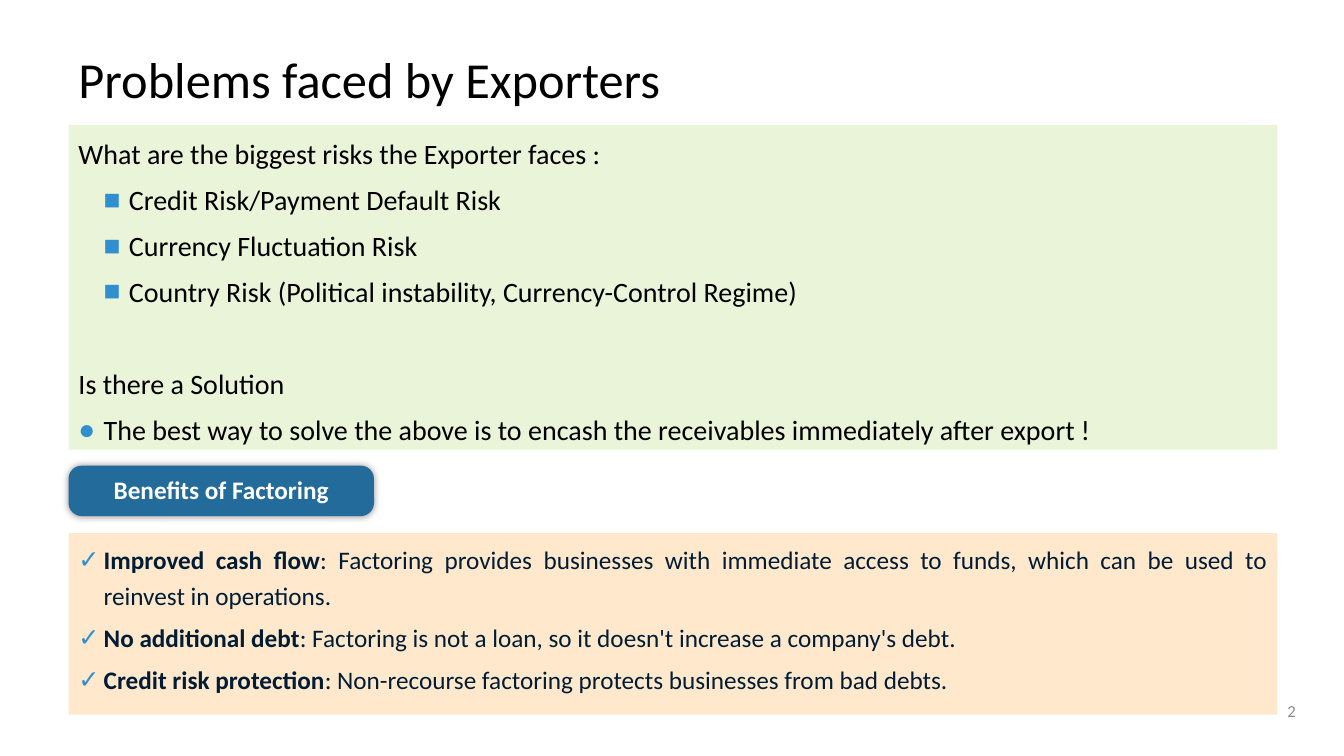
from lxml import etree
from pptx import Presentation
from pptx.dml.color import RGBColor
from pptx.enum import shapes, text
from pptx.oxml import ns
from pptx.util import Inches, Pt

deck = Presentation()
deck.slide_width, deck.slide_height = Inches(13.33), Inches(7.5)
slide = deck.slides.add_slide(deck.slide_layouts[6])

LEFT, WIDE = 0.68, 11.99
BLUE = "2F8FCF"
MID = text.MSO_ANCHOR.MIDDLE
JUST = text.PP_ALIGN.JUSTIFY


def color(code):
    return RGBColor.from_string(code)


def write(box, words, size=20, ink="000000", lead="", bold=False, align=None,
          line=1.2, before=2, after=2, mark=None, indent=0):
    """Add a paragraph, with an optional bold lead and bullet mark."""
    frame = box.text_frame
    first = not frame.paragraphs[0].runs
    para = frame.paragraphs[0] if first else frame.add_paragraph()
    para.line_spacing = line
    para.space_before = Pt(0 if first else before)
    para.space_after = Pt(after)
    if align is not None:
        para.alignment = align
    if mark:
        props = para._p.get_or_add_pPr()
        props.set("marL", str(Inches(indent)))
        props.set("indent", str(Inches(-0.25)))
        tint = etree.SubElement(props, ns.qn("a:buClr"))
        etree.SubElement(tint, ns.qn("a:srgbClr"), val=BLUE)
        etree.SubElement(props, ns.qn("a:buFont"), typeface="Arial")
        etree.SubElement(props, ns.qn("a:buChar"), char=mark)
    for part, heavy in ((lead, True), (words, bold)):
        if part:
            run = para.add_run()
            run.text = part
            run.font.name, run.font.size = "Calibri", Pt(size)
            run.font.bold = heavy
            run.font.color.rgb = color(ink)


def panel(top, high, fill, wide=WIDE, kind=shapes.MSO_SHAPE.RECTANGLE,
          anchor=text.MSO_ANCHOR.TOP):
    box = slide.shapes.add_shape(kind, Inches(LEFT), Inches(top),
                                 Inches(wide), Inches(high))
    box.shadow.inherit = False
    box.fill.solid()
    box.fill.fore_color.rgb = color(fill)
    box.line.fill.background()
    box.text_frame.word_wrap = True
    box.text_frame.vertical_anchor = anchor
    return box


# Title and page number
for words, spot, size, ink, anchor in (
    ("Problems faced by Exporters", (LEFT, 0.41, 12, 0.72), 36, "000000",
     text.MSO_ANCHOR.BOTTOM),
    ("2", (12.67, 6.85, 0.65, 0.4), 12, "8C8C8C", MID),
):
    box = slide.shapes.add_textbox(*map(Inches, spot))
    box.text_frame.word_wrap = True
    box.text_frame.vertical_anchor = anchor
    write(box, words, size=size, ink=ink, line=0.9 if size == 36 else 1, after=0)

# Risks and the solution
risks = panel(1.24, 3.22, "EAF4D8")
write(risks, "What are the biggest risks the Exporter faces :", align=JUST)
for risk in ("Credit Risk/Payment Default Risk", "Currency Fluctuation Risk",
             "Country Risk (Political instability, Currency-Control Regime)"):
    write(risks, risk, align=JUST, mark="■", indent=0.5)
write(risks, "Is there a Solution", align=JUST, before=35)
write(risks, "The best way to solve the above is to encash the receivables "
      "immediately after export !", align=JUST, mark="●", indent=0.25)

# Heading badge with a soft glow of shadow
badge = panel(4.62, 0.5, "236B9B", wide=3.03,
              kind=shapes.MSO_SHAPE.ROUNDED_RECTANGLE, anchor=MID)
badge.adjustments[0] = 0.26
glow = etree.SubElement(badge._element.spPr.find(ns.qn("a:effectLst")),
                        ns.qn("a:outerShdw"), blurRad=str(Pt(5)), dist="0",
                        dir="0", algn="ctr", rotWithShape="0")
shade = etree.SubElement(glow, ns.qn("a:srgbClr"), val="000000")
etree.SubElement(shade, ns.qn("a:alpha"), val="40000")
frame = badge.text_frame
frame.margin_left = frame.margin_right = Inches(0.02)
frame.margin_top = frame.margin_bottom = Inches(0.02)
write(badge, "Benefits of Factoring", size=18, ink="FFFFFF", bold=True,
      align=text.PP_ALIGN.CENTER, line=0.9, after=0)

# Benefits
gains = panel(5.29, 1.8, "FFE8CC")
for lead, words in (
    ("Improved cash flow", ": Factoring provides businesses with immediate "
     "access to funds, which can be used to reinvest in operations."),
    ("No additional debt", ": Factoring is not a loan, so it doesn't "
     "increase a company's debt."),
    ("Credit risk protection", ": Non-recourse factoring protects "
     "businesses from bad debts."),
):
    write(gains, words, size=18, ink="001D35", lead=lead, align=JUST,
          mark="✓", indent=0.25)

deck.save("out.pptx")
